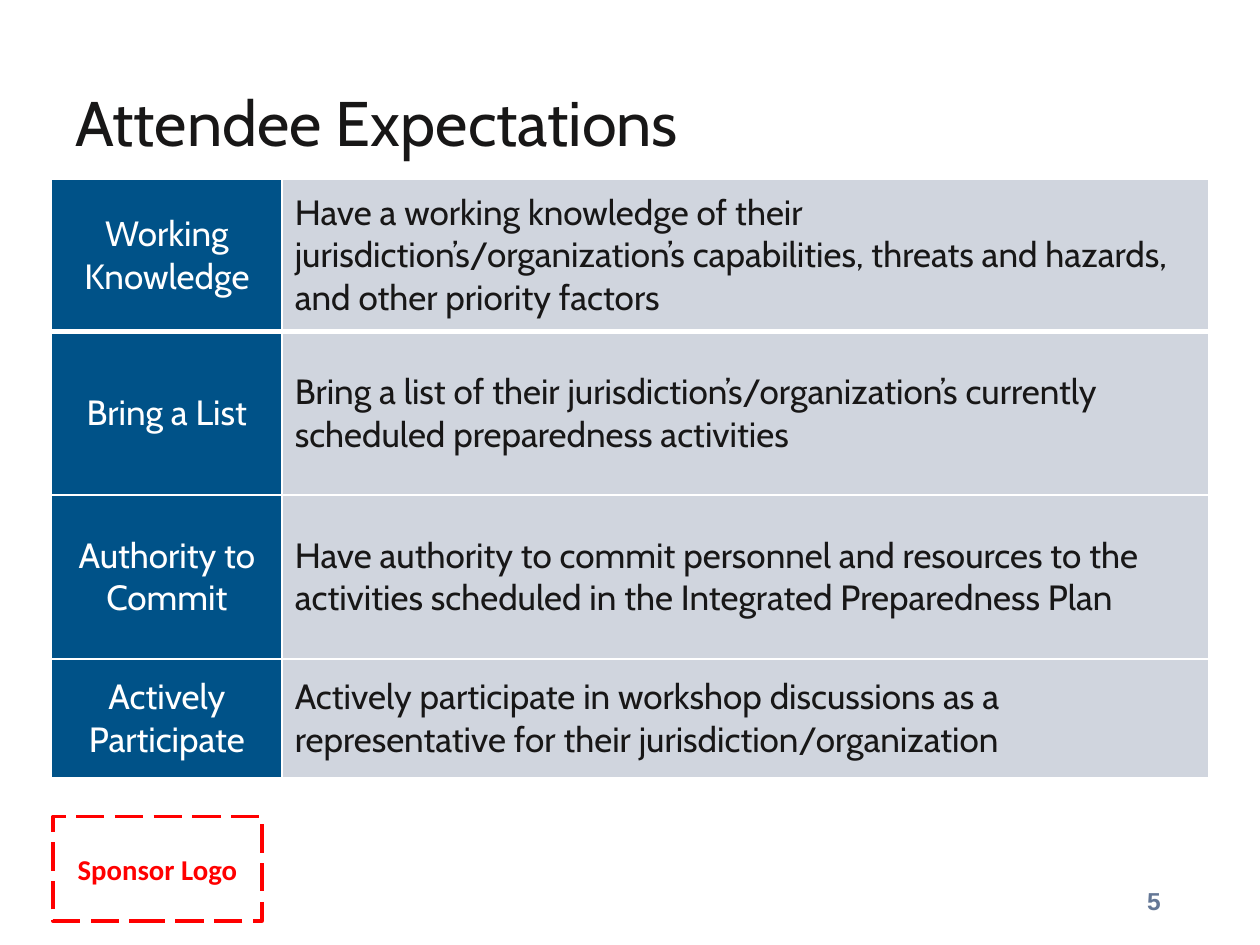
from pptx import Presentation
from pptx.dml.color import RGBColor
from pptx.enum.dml import MSO_LINE
from pptx.enum.shapes import MSO_SHAPE
from pptx.enum.text import MSO_ANCHOR, PP_ALIGN
from pptx.oxml import parse_xml
from pptx.oxml.ns import nsdecls
from pptx.util import Inches, Pt

WHITE, INK, BLUE, GREY = "FFFFFF", "181717", "005288", "D0D5DE"
RED, SLATE = "FF0000", "647796"

EXPECTATIONS = [
    ("Working Knowledge",
     "Have a working knowledge of their jurisdiction’s/organization’s "
     "capabilities, threats and hazards, and other priority factors"),
    ("Bring a List",
     "Bring a list of their jurisdiction’s/organization’s currently "
     "scheduled preparedness activities"),
    ("Authority to Commit",
     "Have authority to commit personnel and resources to the activities "
     "scheduled in the Integrated Preparedness Plan"),
    ("Actively Participate",
     "Actively participate in workshop discussions as a representative "
     "for their jurisdiction/organization"),
]
COLUMN_WIDTHS = [1.83, 7.35]
ROW_HEIGHTS = [1.21, 1.3, 1.3, 0.94]


def colour(hex_string):
    return RGBColor.from_string(hex_string)


def write(frame, text, size, font, hex_string, align=PP_ALIGN.LEFT, bold=False):
    frame.word_wrap = True
    para = frame.paragraphs[0]
    para.alignment = align
    span = para.add_run()
    span.text = text
    span.font.size = Pt(size)
    span.font.name = font
    span.font.bold = bold
    span.font.color.rgb = colour(hex_string)
    return para


def add_title(page, box, text):
    title = page.shapes.title
    title.left, title.top, title.width, title.height = map(Inches, box)
    title.text_frame.vertical_anchor = MSO_ANCHOR.MIDDLE
    write(title.text_frame, text, 36, "Cabin", INK)


def set_borders(cell, bottom_width):
    """Draw white rules round a cell, with its own width at the bottom."""
    widths = {"lnL": 1, "lnR": 1, "lnT": 1, "lnB": bottom_width}
    properties = cell._tc.get_or_add_tcPr()
    for position, (tag, width) in enumerate(widths.items()):
        properties.insert(position, parse_xml(
            f'<a:{tag} {nsdecls("a")} w="{Pt(width)}"><a:solidFill>'
            f'<a:srgbClr val="{WHITE}"/></a:solidFill></a:{tag}>'))


def fill_cell(cell, text, is_label, is_first):
    cell.fill.solid()
    cell.fill.fore_color.rgb = colour(BLUE if is_label else GREY)
    cell.vertical_anchor = MSO_ANCHOR.MIDDLE
    para = write(cell.text_frame, text, 20, "Cabin",
                 WHITE if is_label else INK,
                 PP_ALIGN.CENTER if is_label else PP_ALIGN.LEFT)
    if is_label and not is_first:
        cell.margin_left = cell.margin_right = Inches(0.07)
        cell.margin_top = cell.margin_bottom = 0
        para.space_after = Pt(6)
    set_borders(cell, 3 if is_first else 1)


def add_expectations(page, left, top):
    box = map(Inches, (left, top, sum(COLUMN_WIDTHS), sum(ROW_HEIGHTS)))
    table = page.shapes.add_table(
        len(ROW_HEIGHTS), len(COLUMN_WIDTHS), *box).table
    table.first_row = table.horz_banding = False
    for column, width in zip(table.columns, COLUMN_WIDTHS):
        column.width = Inches(width)
    for index, (row, height) in enumerate(zip(table.rows, ROW_HEIGHTS)):
        row.height = Inches(height)
        for number, text in enumerate(EXPECTATIONS[index]):
            fill_cell(row.cells[number], text, number == 0, index == 0)


def add_sponsor_frame(page, box, text):
    frame = page.shapes.add_shape(MSO_SHAPE.RECTANGLE, *map(Inches, box))
    frame.shadow.inherit = False
    frame.fill.background()
    frame.line.color.rgb = colour(RED)
    frame.line.width = Pt(2)
    frame.line.dash_style = MSO_LINE.LONG_DASH
    frame.text_frame.vertical_anchor = MSO_ANCHOR.MIDDLE
    write(frame.text_frame, text, 16.4, "Calibri", RED, PP_ALIGN.CENTER, True)


def add_page_number(page, box, text):
    frame = page.shapes.add_textbox(*map(Inches, box)).text_frame
    frame.vertical_anchor = MSO_ANCHOR.MIDDLE
    para = write(frame, text, 14, "Arial", SLATE, PP_ALIGN.RIGHT, True)
    para.space_after = Pt(6)


def main():
    deck = Presentation()
    deck.slide_width, deck.slide_height = Inches(10), Inches(7.5)
    page = deck.slides.add_slide(deck.slide_layouts[5])
    add_sponsor_frame(page, (0.42, 6.48, 1.66, 0.83), "Sponsor Logo")
    add_title(page, (0.5, 0.35, 9.18, 1.23), "Attendee Expectations")
    add_expectations(page, 0.41, 1.42)
    add_page_number(page, (7.06, 6.95, 2.25, 0.4), "5")
    deck.save("out.pptx")


if __name__ == "__main__":
    main()
